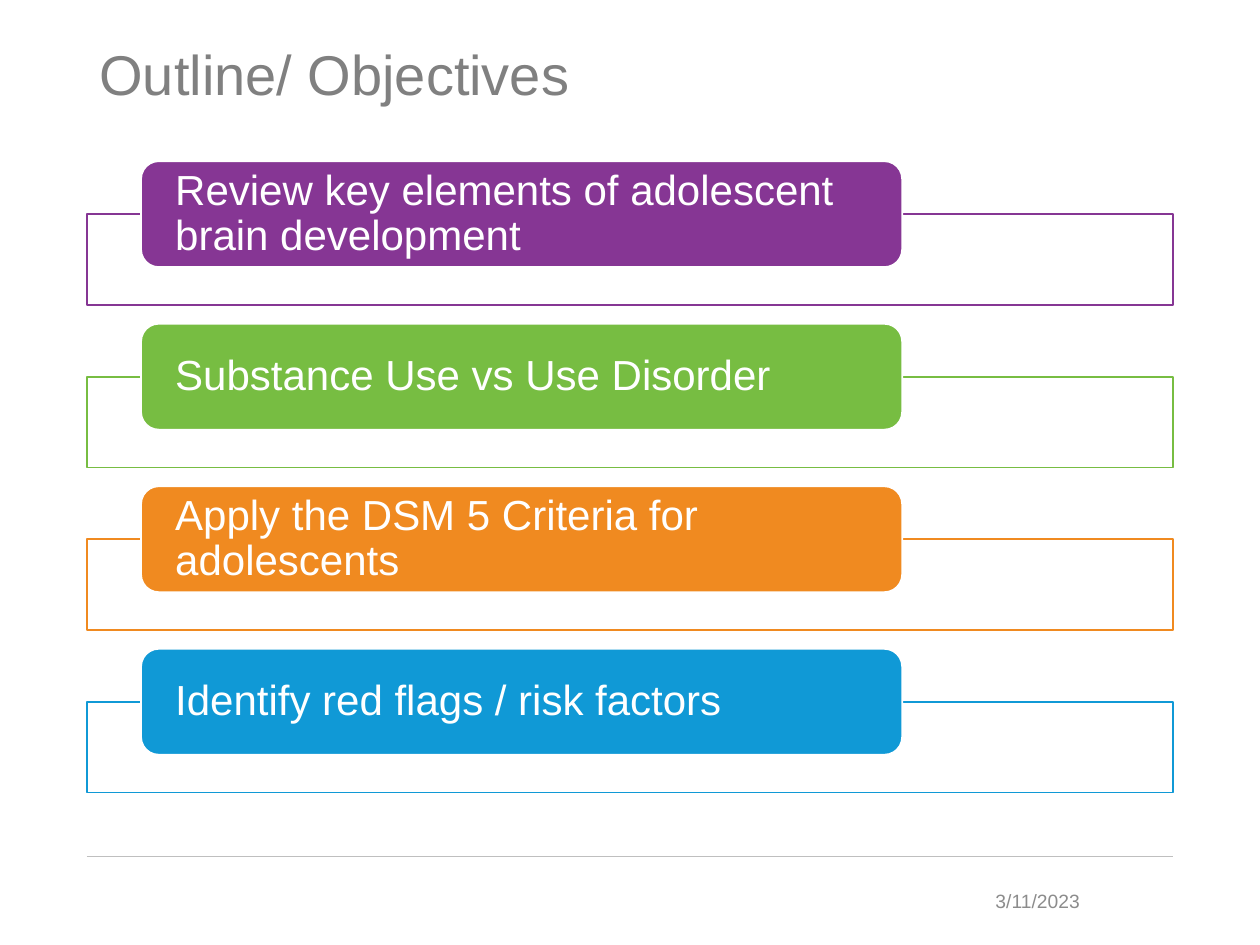
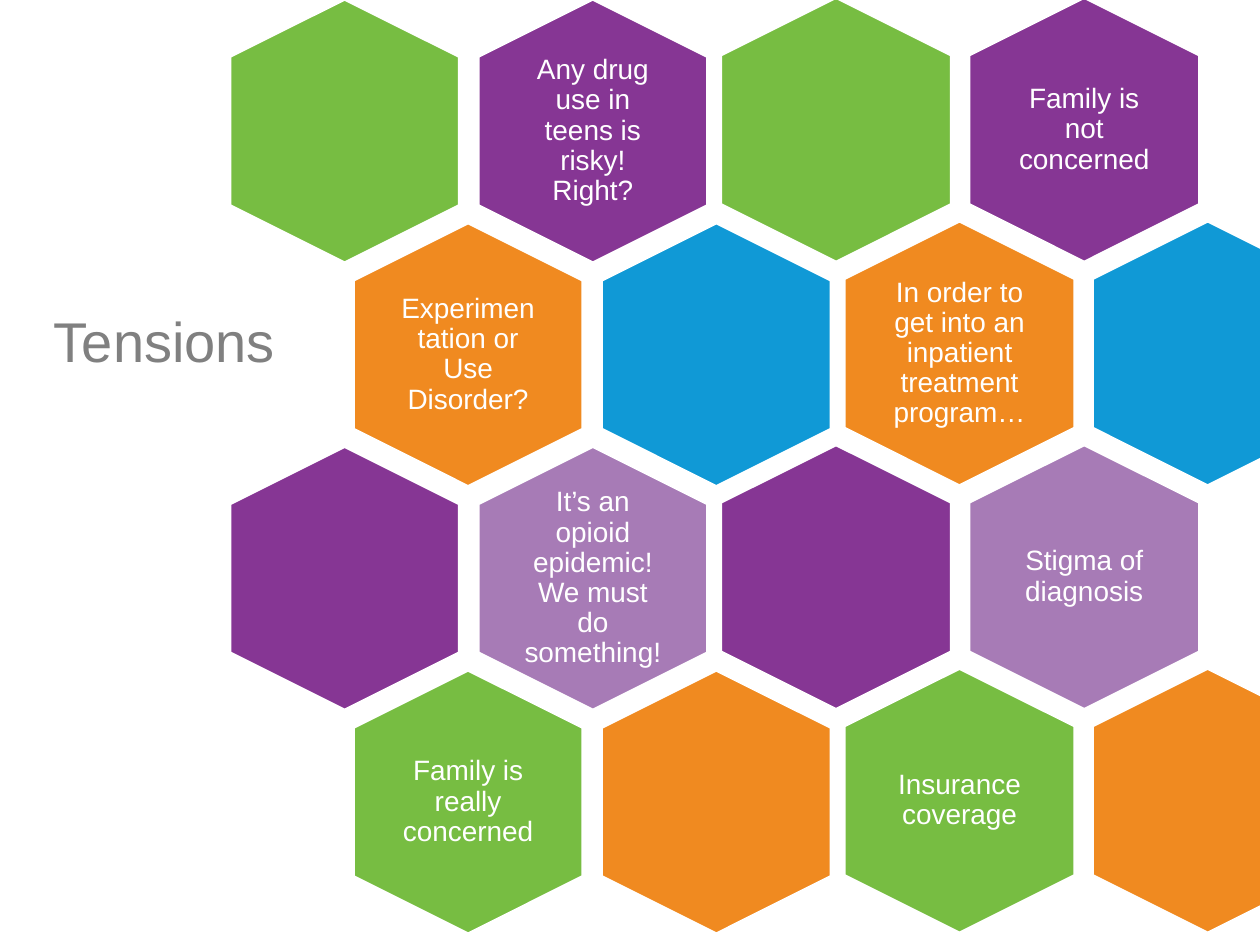
from dataclasses import dataclass

from lxml.etree import SubElement
from pptx import Presentation
from pptx.dml.color import RGBColor
from pptx.enum.shapes import MSO_CONNECTOR, MSO_SHAPE
from pptx.enum.text import MSO_ANCHOR, PP_ALIGN
from pptx.oxml.ns import qn
from pptx.util import Inches, Pt


@dataclass(frozen=True)
class Theme:
    font: str = "Arial"
    white: str = "FFFFFF"
    purple: str = "863694"
    lilac: str = "A77BB6"
    green: str = "77BD42"
    orange: str = "F08A20"
    blue: str = "1099D6"
    title_gray: str = "808080"
    date_gray: str = "8C8C8C"
    rule_gray: str = "BFBFBF"
    title_size: int = 32
    objective_size: int = 24
    tension_size: int = 16
    date_size: int = 11


THEME = Theme()

OBJECTIVES = [
    ("Review key elements of adolescent brain development", THEME.purple),
    ("Substance Use vs Use Disorder", THEME.green),
    ("Apply the DSM 5 Criteria for adolescents", THEME.orange),
    ("Identify red flags / risk factors", THEME.blue),
]
DATE = "3/11/2023"

# Colours of each honeycomb row, left cell then right cell
HONEYCOMB_COLORS = [
    (THEME.green, THEME.purple),
    (THEME.orange, THEME.blue),
    (THEME.purple, THEME.lilac),
    (THEME.green, THEME.orange),
]
# One label per row: in the right cell of even rows, the left cell of odd rows
HONEYCOMBS = [
    {"left": 1.69, "top": 0.13, "outline": 1.5, "labels": [
        "Any drug use in teens is risky! Right?",
        "Experimentation or Use Disorder?",
        "It’s an opioid epidemic! We must do something!",
        "Family is really concerned",
    ]},
    {"left": 5.59, "top": 0.12, "outline": 1, "labels": [
        "Family is not concerned",
        "In order to get into an inpatient treatment program…",
        "Stigma of diagnosis",
        "Insurance coverage",
    ]},
]

MARGIN, CONTENT_WIDTH = 0.69, 8.62
TITLE_HEIGHT = 1.23
OBJECTIVE_TOP, OBJECTIVE_PITCH = 1.28, 1.29
HEXAGON_WIDTH, HEXAGON_HEIGHT = 2.09, 1.82
COLUMN_PITCH, ROW_PITCH = 1.97, 3.55 / 2
ODD_ROW_SHIFT = 0.98
LABEL_WIDTH, LABEL_HEIGHT = 1.25, 1.44


def color(value):
    return RGBColor.from_string(value)


def write(shape, text, size, text_color, align=PP_ALIGN.LEFT, insets=(0.1, 0.05), line_spacing=0.9):
    """Fill a shape with one vertically centred paragraph."""
    frame = shape.text_frame
    frame.word_wrap = True
    frame.vertical_anchor = MSO_ANCHOR.MIDDLE
    frame.margin_left = frame.margin_right = Inches(insets[0])
    frame.margin_top = frame.margin_bottom = Inches(insets[1])
    paragraph = frame.paragraphs[0]
    paragraph.text = text
    paragraph.alignment = align
    paragraph.line_spacing = line_spacing
    paragraph.font.name = THEME.font
    paragraph.font.size = Pt(size)
    paragraph.font.color.rgb = color(text_color)


def add_text(slide, box, *args, **options):
    write(slide.shapes.add_textbox(*map(Inches, box)), *args, **options)


def add_title(slide, text, left, top):
    add_text(slide, (left, top, CONTENT_WIDTH, TITLE_HEIGHT), text, THEME.title_size, THEME.title_gray)


def add_block(slide, kind, box, fill, outline, outline_width):
    shape = slide.shapes.add_shape(kind, *map(Inches, box))
    shape.shadow.inherit = False
    shape.fill.solid()
    shape.fill.fore_color.rgb = color(fill)
    shape.line.color.rgb = color(outline)
    shape.line.width = Pt(outline_width)
    return shape


def add_footer(slide):
    top = Inches(6.8)
    rule = slide.shapes.add_connector(
        MSO_CONNECTOR.STRAIGHT, Inches(MARGIN), top, Inches(MARGIN + CONTENT_WIDTH), top)
    rule.line.color.rgb = color(THEME.rule_gray)
    rule.line.width = Pt(0.5)
    SubElement(rule._element.spPr, qn("a:effectLst"))
    add_text(slide, (7.34, 6.95, 1.33, 0.4), DATE, THEME.date_size, THEME.date_gray,
             align=PP_ALIGN.RIGHT, line_spacing=1.0)


def add_objective(slide, text, accent, top):
    add_block(slide, MSO_SHAPE.RECTANGLE, (MARGIN, top + 0.42, CONTENT_WIDTH, 0.72),
              THEME.white, accent, 1)
    bar = add_block(slide, MSO_SHAPE.ROUNDED_RECTANGLE, (1.12, top, 6.04, 0.84),
                    accent, THEME.white, 1)
    write(bar, text, THEME.objective_size, THEME.white, insets=(0.23, 0))


def add_honeycomb(slide, left, top, outline, labels):
    for row, (colors, label) in enumerate(zip(HONEYCOMB_COLORS, labels)):
        is_odd = row % 2
        row_left = left + ODD_ROW_SHIFT * is_odd
        row_top = top + ROW_PITCH * row
        for column, fill in enumerate(colors):
            cell_left = row_left + COLUMN_PITCH * column
            hexagon = add_block(slide, MSO_SHAPE.HEXAGON,
                                (cell_left, row_top, HEXAGON_WIDTH, HEXAGON_HEIGHT),
                                fill, THEME.white, outline)
            hexagon.rotation = 90
            if column != is_odd:
                label_box = (cell_left + (HEXAGON_WIDTH - LABEL_WIDTH) / 2,
                             row_top + (HEXAGON_HEIGHT - LABEL_HEIGHT) / 2,
                             LABEL_WIDTH, LABEL_HEIGHT)
                add_text(slide, label_box, label, THEME.tension_size, THEME.white,
                         align=PP_ALIGN.CENTER, insets=(0.07, 0.07))


def build_objectives(slide):
    add_footer(slide)
    add_title(slide, "Outline/ Objectives", MARGIN, 0)
    for index, (text, accent) in enumerate(OBJECTIVES):
        add_objective(slide, text, accent, OBJECTIVE_TOP + OBJECTIVE_PITCH * index)


def build_tensions(slide):
    add_title(slide, "Tensions", 0.33, 2.12)
    for honeycomb in HONEYCOMBS:
        add_honeycomb(slide, **honeycomb)


def main():
    presentation = Presentation()
    presentation.slide_width = Inches(10)
    presentation.slide_height = Inches(7.5)
    blank = presentation.slide_layouts[6]
    for build in (build_objectives, build_tensions):
        build(presentation.slides.add_slide(blank))
    presentation.save("out.pptx")


if __name__ == "__main__":
    main()
